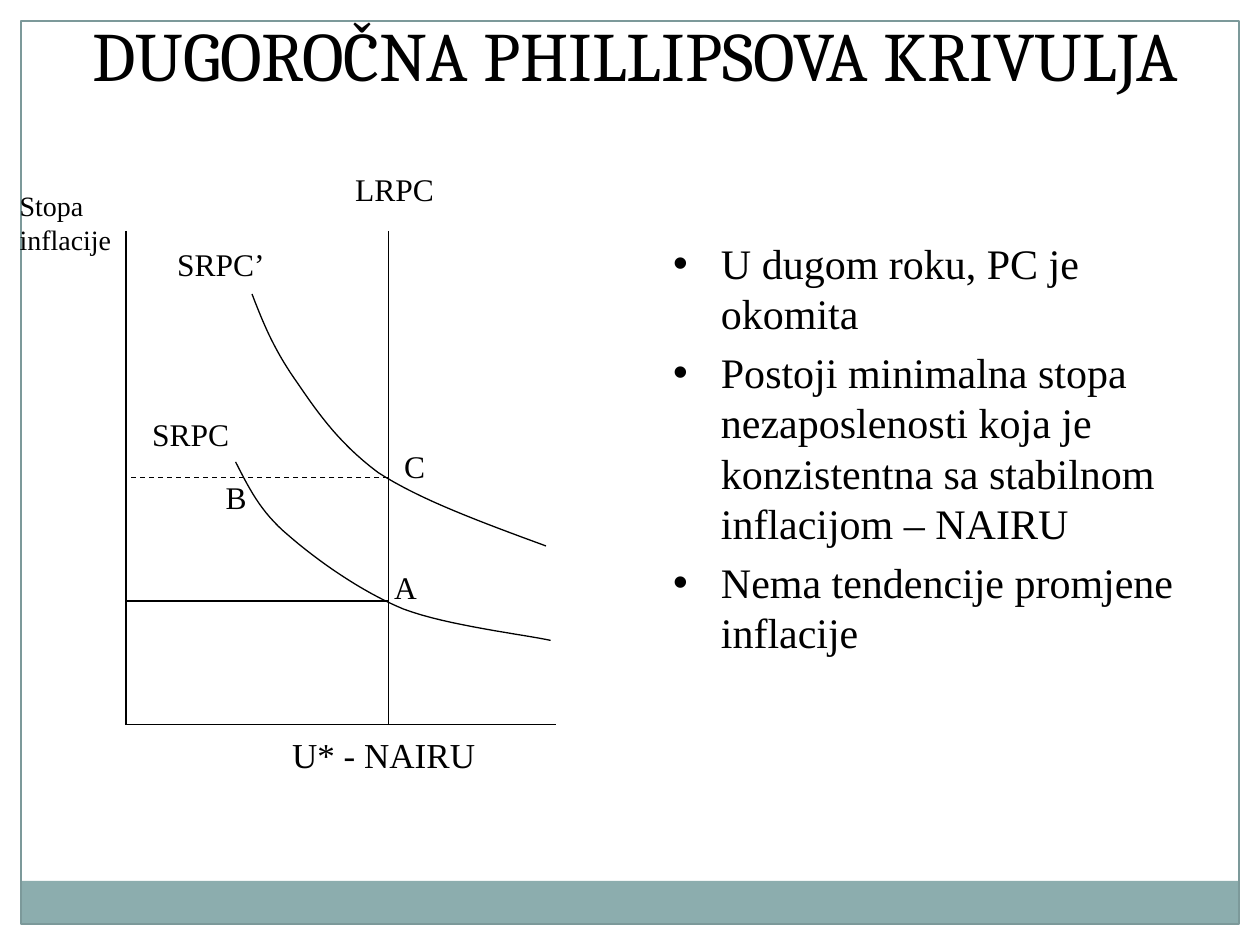
from pptx import Presentation
from pptx.dml.color import RGBColor
from pptx.enum.dml import MSO_LINE
from pptx.enum.shapes import MSO_CONNECTOR, MSO_SHAPE
from pptx.enum.text import MSO_ANCHOR, MSO_AUTO_SIZE, PP_ALIGN
from pptx.oxml.ns import qn
from pptx.util import Inches, Pt
from lxml import etree

BLACK = RGBColor(0, 0, 0)
BAND = RGBColor(0x8C, 0xAD, 0xAE)
FRAME = RGBColor(0x7C, 0x99, 0x9A)
SERIF = "Times New Roman"
CELL = Inches(10) // 120

BULLETS = [
    "U dugom roku, PC je okomita",
    "Postoji minimalna stopa nezaposlenosti koja je konzistentna sa stabilnom inflacijom – NAIRU",
    "Nema tendencije promjene inflacije",
]
SRPC = [(10.44, 22), (11.64, 24.3), (12.72, 26.7), (15.48, 29), (18.12, 31.3),
        (22.3, 34.3), (26.4, 36), (30.6, 37.6), (38.3, 38.5), (40.44, 39)]
SRPC_SHIFTED = [(12, 6), (13, 8.6), (14, 11.1), (16, 14), (18, 16.9),
                (20, 20), (24, 23), (28, 25.6), (34, 27.8), (40, 30)]
LABELS = [
    ("U* - NAIRU", 14.64, 47.24, 20, 5.3, 20),
    ("Stopa\ninflacije", -11.3, -4.6, 11.3, 7.7, 16),
    ("SRPC", 1.3, 16.9, 9.84, 4.8, 18),
    ("SRPC’", 3.7, 0.7, 10.8, 4.8, 18),
    ("A", 24.36, 31.5, 4.5, 4.8, 18),
    ("B", 8.3, 22.9, 4.5, 4.8, 18),
    ("C", 25.3, 20, 4.5, 4.8, 18),
    ("LRPC", 20.64, -6.4, 10, 4.8, 18),
]


def cells(*values):
    return [round(v * CELL) for v in values]


def place(sp, box):
    sp.left, sp.top, sp.width, sp.height = cells(*box)


def set_font(p, size, name=SERIF):
    p.font.size, p.font.name = Pt(size), name
    p.font.color.rgb = BLACK


def add_frame(slide, box):
    x, y, w, h = box
    band = slide.shapes.add_shape(MSO_SHAPE.RECTANGLE, *cells(x, y + h - 4.1, w, 4.1))
    band.fill.solid()
    band.fill.fore_color.rgb = BAND
    band.line.fill.background()
    frame = slide.shapes.add_shape(MSO_SHAPE.RECTANGLE, *cells(*box))
    frame.fill.background()
    frame.line.color.rgb = FRAME
    frame.line.width = Pt(0.75)
    for sp in (band, frame):
        sp.shadow.inherit = False


def add_title(slide, box):
    sp = slide.shapes.title
    place(sp, box)
    tf = sp.text_frame
    tf.text = "DUGOROČNA PHILLIPSOVA KRIVULJA"
    tf.vertical_anchor = MSO_ANCHOR.TOP
    tf.auto_size = MSO_AUTO_SIZE.NONE
    tf.paragraphs[0].alignment = PP_ALIGN.CENTER
    set_font(tf.paragraphs[0], 39.6, "Cambria")


def add_bullets(slide, box):
    sp = slide.placeholders[1]
    place(sp, box)
    tf = sp.text_frame
    tf.text = "\n".join(BULLETS)
    tf.auto_size = MSO_AUTO_SIZE.NONE
    for p in tf.paragraphs:
        set_font(p, 24)
        pPr = p._p.get_or_add_pPr()
        pPr.set("marL", str(Inches(0.38)))
        pPr.set("indent", str(-Inches(0.38)))


def add_line(slide, x1, y1, x2, y2):
    ln = slide.shapes.add_connector(MSO_CONNECTOR.STRAIGHT, *cells(x1, y1, x2, y2))
    ln.line.color.rgb = BLACK
    ln.line.width = Pt(0.75)
    etree.SubElement(ln._element.spPr, qn("a:effectLst"))
    return ln


def bezier(points, steps=16):
    for i in range(0, len(points) - 1, 3):
        for k in range(1, steps + 1):
            t = k / steps
            weights = ((1 - t) ** 3, 3 * t * (1 - t) ** 2, 3 * t * t * (1 - t), t ** 3)
            yield tuple(sum(w * pt[axis] for w, pt in zip(weights, points[i:i + 4]))
                        for axis in (0, 1))


def add_curve(slide, x, y, points):
    moved = [(x + px, y + py) for px, py in points]
    fb = slide.shapes.build_freeform(*cells(*moved[0]))
    fb.add_line_segments([cells(*pt) for pt in bezier(moved)], close=False)
    sp = fb.convert_to_shape()
    sp.fill.background()
    sp.line.color.rgb = BLACK
    sp.line.width = Pt(0.75)
    sp.shadow.inherit = False


def add_label(slide, text, x, y, w, h, size):
    tf = slide.shapes.add_textbox(*cells(x, y, w, h)).text_frame
    tf.word_wrap = False
    tf.text = text
    for p in tf.paragraphs:
        set_font(p, size)


def add_phillips_chart(slide, box):
    x, y, w, h = box
    nairu = x + 25
    add_line(slide, x, y, x, y + h)
    add_line(slide, x, y + h, x + w, y + h)
    add_line(slide, nairu, y, nairu, y + h)
    add_line(slide, nairu, y + 35.25, x, y + 35.25)
    level_c = add_line(slide, nairu, y + 23.5, x, y + 23.5)
    level_c.line.dash_style = MSO_LINE.DASH
    for points in (SRPC, SRPC_SHIFTED):
        add_curve(slide, x, y, points)
    for text, dx, dy, lw, lh, size in LABELS:
        add_label(slide, text, x + dx, y + dy, lw, lh, size)


def main():
    prs = Presentation()
    prs.slide_width, prs.slide_height = cells(120, 90)
    slide = prs.slides.add_slide(prs.slide_layouts[1])
    add_frame(slide, (2, 2, 116, 86))
    add_title(slide, (6.5, 0.6, 108, 15))
    add_phillips_chart(slide, (12, 22, 41, 47))
    add_bullets(slide, (62.9, 22, 51.6, 41.9))
    prs.save("out.pptx")


if __name__ == "__main__":
    main()
